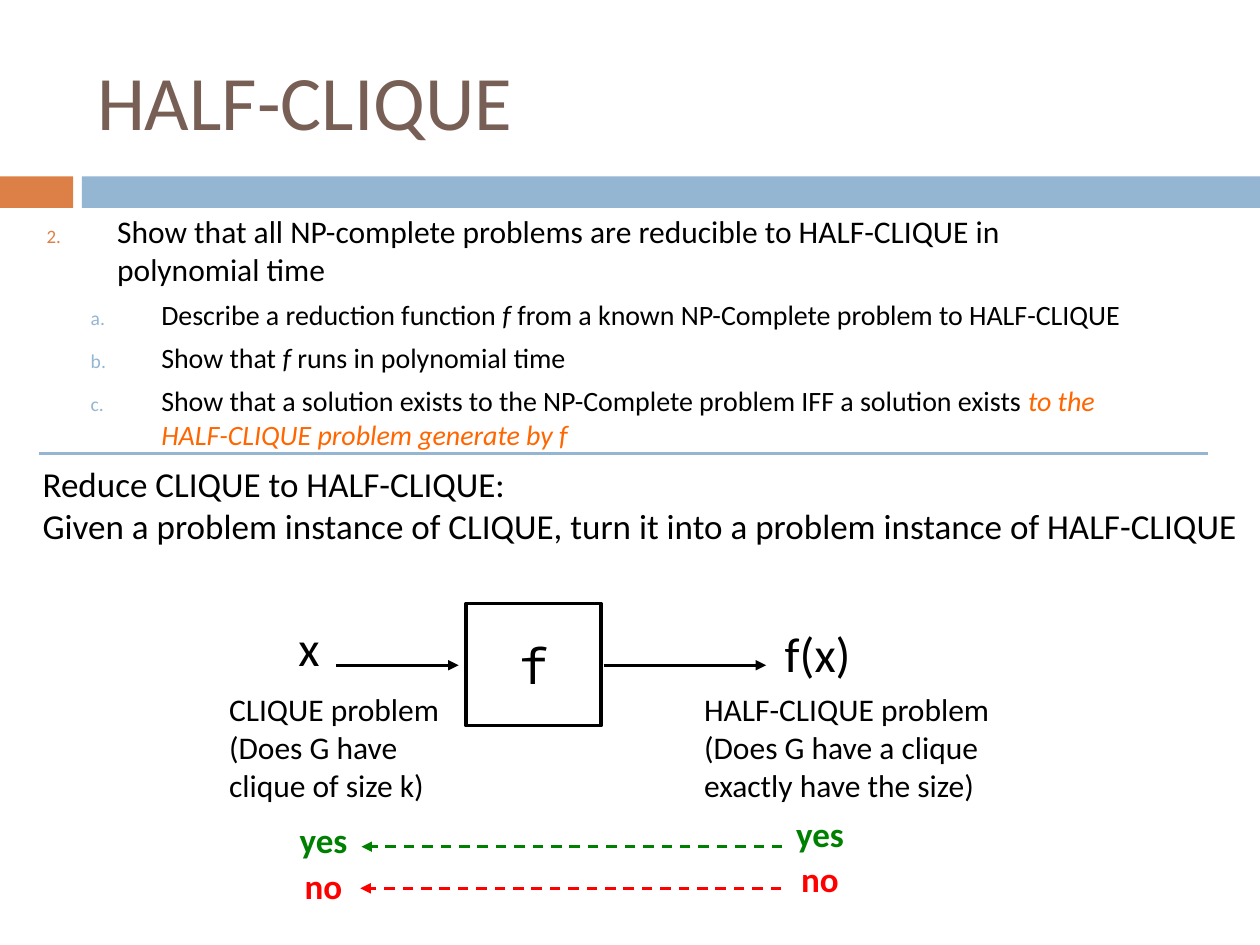
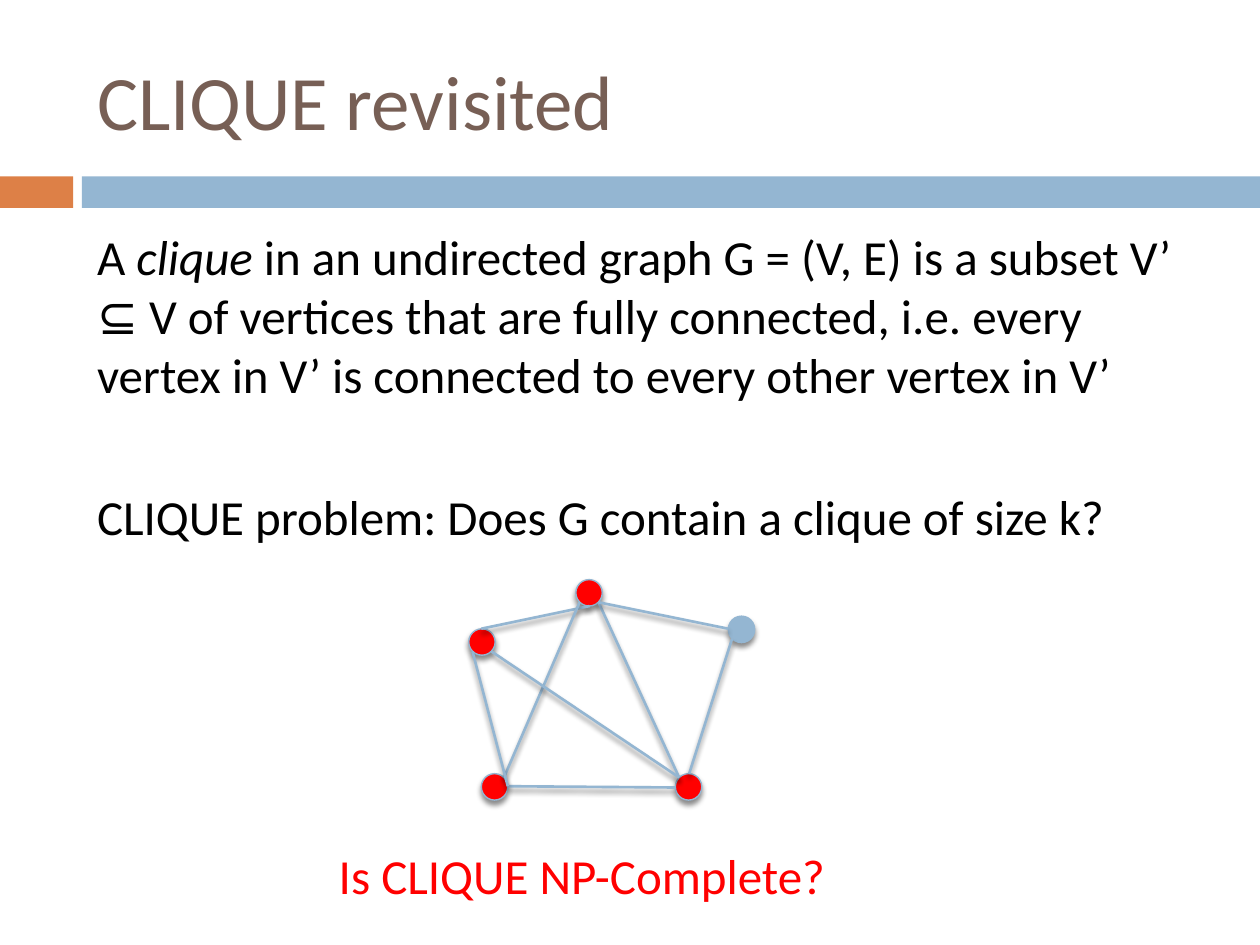
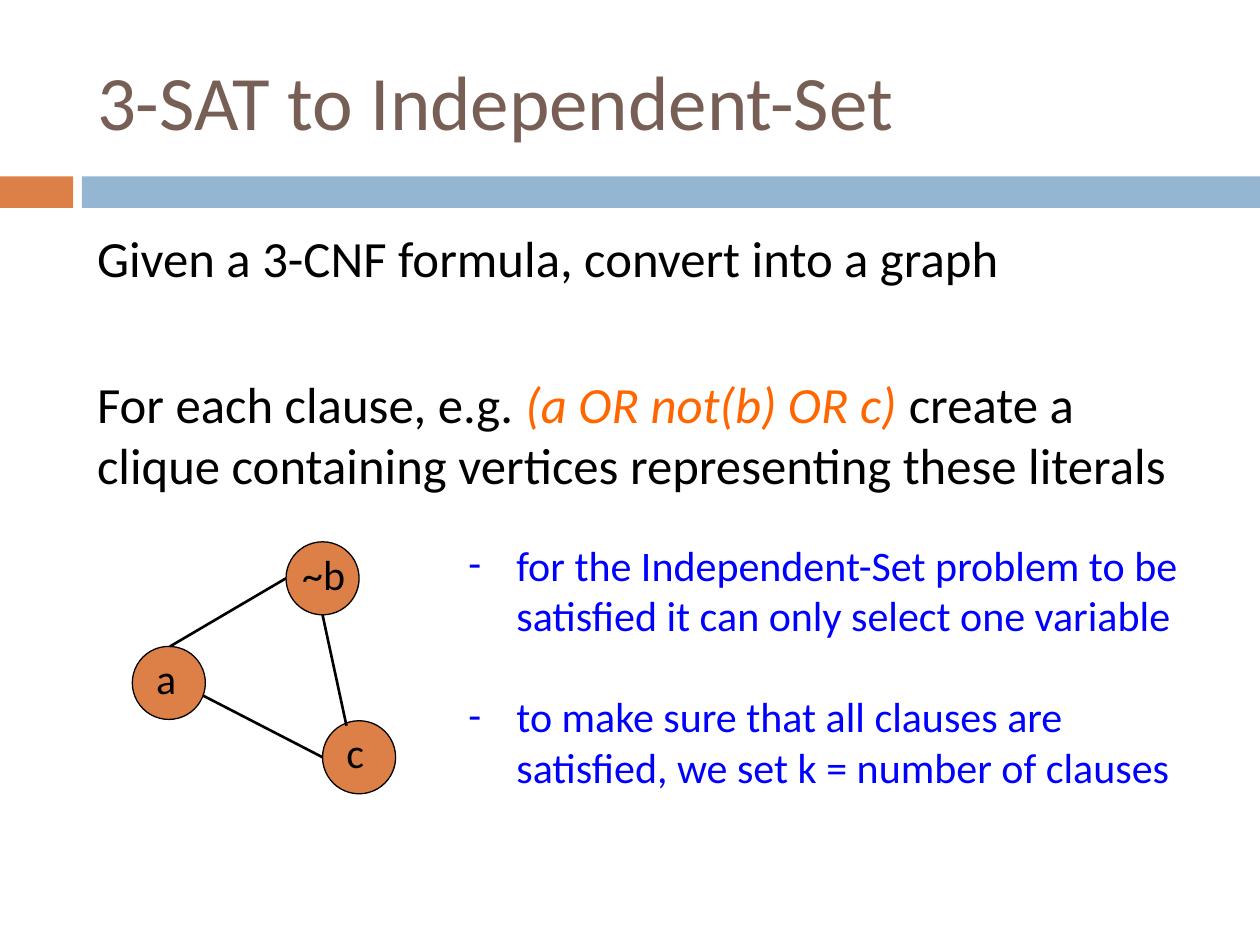
from dataclasses import dataclass
from lxml import etree
from pptx import Presentation
from pptx import util as u
from pptx.dml.color import RGBColor
from pptx.enum import dml, shapes, text
from pptx.oxml import ns, parse_xml


@dataclass(frozen=True)
class Theme:
    font: str = "Calibri"
    mono: str = "Noto Sans Mono"
    ink: str = "000000"
    paper: str = "FFFFFF"
    brown: str = "775F55"
    orange: str = "DD8047"
    blue: str = "94B6D2"
    accent: str = "FF6600"
    note: str = "0000FF"
    yes: str = "008000"
    no: str = "FF0000"
    title: float = 44
    large: float = 28
    medium: float = 24
    normal: float = 20
    small: float = 18
    detail: float = 16


T = Theme()
deck = Presentation()
deck.slide_width, deck.slide_height = u.Inches(10), u.Inches(7.5)
COL, ROW = deck.slide_width / 100, deck.slide_height / 75


def place(*cells):
    return [u.Emu(round(n * (ROW if i % 2 else COL))) for i, n in enumerate(cells)]


def write(frame, lines, size, color=T.ink, name=T.font, bold=False, before=0, level=0,
          align=text.PP_ALIGN.LEFT, **frame_format):
    for key, value in frame_format.items():
        setattr(frame, key, value)
    for line in lines:
        paragraph = frame.add_paragraph() if frame.text else frame.paragraphs[0]
        for key, value in {"alignment": align, "level": level,
                           "space_before": u.Pt(before)}.items():
            setattr(paragraph, key, value)
        for part in [line] if isinstance(line, str) else line:
            words, italic, tint = (part, False, color) if isinstance(part, str) else part
            run = paragraph.add_run()
            run.text = words
            font_format = {"name": name, "size": u.Pt(size), "bold": bold, "italic": italic}
            for key, value in font_format.items():
                setattr(run.font, key, value)
            run.font.color.rgb = RGBColor.from_string(tint)


BODY = {"auto_size": text.MSO_AUTO_SIZE.NONE, "word_wrap": True,
        "vertical_anchor": text.MSO_ANCHOR.TOP}
pages = []
for heading, body_area in [
    ("HALF-CLIQUE", (2.7, 16.35, 89.2, 23.1)),
    ("CLIQUE revisited", (6.7, 17.5, 89.2, 27.2)),
    ("3-SAT to Independent-Set", (6.7, 17.5, 89.2, 25)),
]:
    page = deck.slides.add_slide(deck.slide_layouts[1])
    pages.append(page)
    for part, area in [(page.shapes.title, (6.7, 2.5, 89.2, 10.8)),
                       (page.placeholders[1], body_area)]:
        part.left, part.top, part.width, part.height = place(*area)
    write(page.shapes.title.text_frame, [heading], T.title, T.brown,
          **{**BODY, "vertical_anchor": text.MSO_ANCHOR.MIDDLE})
half_clique, clique, independent_set = pages
steps, definition, conversion = [page.placeholders[1].text_frame for page in pages]

write(steps, ["Show that all NP-complete problems are reducible to HALF-CLIQUE in polynomial time"],
      T.small, before=7, **BODY)
write(steps, [
    ["Describe a reduction function ", ("f", True, T.ink),
     " from a known NP-Complete problem to HALF-CLIQUE"],
    ["Show that ", ("f", True, T.ink), " runs in polynomial time"],
    ["Show that a solution exists to the NP-Complete problem IFF a solution exists ",
     ("to the HALF-CLIQUE problem generate by f", True, T.accent)],
], T.detail, before=5.5, level=1)
write(definition, [
    ["A ", ("clique", True, T.ink),
     " in an undirected graph G = (V, E) is a subset V’ ⊆ V of vertices that are fully "
     "connected, i.e. every vertex in V’ is connected to every other vertex in V’"],
    "CLIQUE problem: Does G contain a clique of size k?",
], T.large, before=47.5, **BODY)
write(conversion, [
    "Given a 3-CNF formula, convert into a graph",
    ["For each clause, e.g. ", ("(a OR not(b) OR c)", True, T.accent),
     " create a clique containing vertices representing these literals"],
], T.large + 1, before=48.5, **BODY)
for frame in (definition, conversion):
    frame.paragraphs[0].space_before = u.Pt(7)

VERTEX, LITERAL = 2.1, 5.8
RECT, OVAL = shapes.MSO_SHAPE.RECTANGLE, shapes.MSO_SHAPE.OVAL
solids = [(page, RECT, area, fill, None, 0) for page in pages for area, fill in [
    ((0, 14, 5.8, 2.5), T.orange), ((6.5, 14, 93.5, 2.5), T.blue)]]
solids.append((half_clique, RECT, (37, 47.9, 10.7, 9.7), T.paper, T.ink, 2))
solids += [(clique, OVAL, (x, y, VERTEX, VERTEX), fill, T.blue, 0.79) for x, y, fill in [
    (45.7, 46, T.no), (37.2, 49.9, T.no), (38.2, 61.4, T.no),
    (53.6, 61.4, T.no), (57.8, 48.9, T.blue)]]
solids += [(independent_set, OVAL, (x, y, LITERAL, LITERAL), T.orange, T.ink, 0.75)
           for x, y in [(10.5, 51.3), (22.7, 43), (25.6, 57.2)]]
shadowed = []
for page, outline, area, fill, edge, weight in solids:
    solid = page.shapes.add_shape(outline, *place(*area))
    solid.shadow.inherit = False
    solid.fill.solid()
    solid.fill.fore_color.rgb = RGBColor.from_string(fill)
    if edge:
        solid.line.color.rgb = RGBColor.from_string(edge)
        solid.line.width = u.Pt(weight)
    else:
        solid.line.fill.background()
    if page is clique and outline == OVAL:
        shadowed.append(solid)
    if fill == T.paper:
        write(solid.text_frame, ["f"], T.large, name=T.mono, align=text.PP_ALIGN.CENTER,
              word_wrap=False, vertical_anchor=text.MSO_ANCHOR.MIDDLE)

links = [
    (half_clique, (3.1, 36, 95.9, 36), T.blue, False, False),
    (half_clique, (26.7, 52.8, 36.4, 52.8), T.ink, True, False),
    (half_clique, (47.9, 52.8, 60.8, 52.8), T.ink, True, False),
    (half_clique, (62.1, 67.2, 28.7, 67.2), T.yes, True, True),
    (half_clique, (62, 70.5, 28.6, 70.5), T.no, True, True),
]
links += [(clique, ends, T.blue, False, False) for ends in [
    (46.8, 48.1, 38.2, 49.9), (47.5, 47.8, 53.9, 61.7), (40.3, 62.4, 53.6, 62.5),
    (40, 61.7, 46, 47.8), (39, 51.7, 53.9, 61.7), (37.5, 51.7, 40.3, 62.4),
    (58.1, 50.7, 54.7, 61.4), (47.5, 47.8, 57.8, 49.9)]]
links += [(independent_set, ends, T.ink, False, False) for ends in [
    (13.5, 51.3, 22.7, 45.9), (16.1, 55.2, 25.6, 60.1), (25.6, 48.8, 27.5, 57.6)]]
for page, ends, color, arrow, dashed in links:
    link = page.shapes.add_connector(shapes.MSO_CONNECTOR.STRAIGHT, *place(*ends))
    link.line.color.rgb = RGBColor.from_string(color)
    link.line.width = u.Pt(1.5)
    if dashed:
        link.line.dash_style = dml.MSO_LINE.DASH
    if arrow:
        etree.SubElement(link.line._get_or_add_ln(), ns.qn("a:tailEnd"), type="triangle")
    etree.SubElement(link._element.spPr, ns.qn("a:effectLst"))
    if page is clique:
        shadowed.append(link)

for part in shadowed:
    part._element.spPr.find(ns.qn("a:effectLst")).append(parse_xml(
        f'<a:outerShdw {ns.nsdecls("a")} blurRad="{u.Pt(3)}" dist="{u.Pt(2.4)}" dir="5400000" '
        'rotWithShape="0"><a:srgbClr val="000000"><a:alpha val="45000"/></a:srgbClr>'
        '</a:outerShdw>'))

captions = [
    (half_clique, (2.4, 36.2, 97.6, 7.7), T.normal, T.ink, True, [
        "Reduce CLIQUE to HALF-CLIQUE:",
        "Given a problem instance of CLIQUE, turn it into a problem instance of HALF-CLIQUE"]),
    (half_clique, (22.7, 48.5, 4, 5.7), T.large, T.ink, False, ["x"]),
    (half_clique, (61.3, 49, 7.4, 5.7), T.large, T.ink, False, ["f(x)"]),
    (half_clique, (17.2, 54.3, 19, 10.1), T.small, T.ink, False,
     ["CLIQUE problem", "(Does G have", "clique of size k)"]),
    (half_clique, (54.9, 54.3, 26, 10.1), T.small, T.ink, False,
     ["HALF-CLIQUE problem", "(Does G have a clique", "exactly have the size)"]),
    (clique, (25.9, 66.6, 40.6, 5.7), T.large, T.no, False, ["Is CLIQUE NP-Complete?"]),
    (independent_set, (11.4, 51.3, 5, 5), T.medium, T.ink, True, ["a"]),
    (independent_set, (23, 43, 8.4, 5.1), T.medium, T.ink, True, ["~b"]),
    (independent_set, (26.5, 57.2, 5, 5), T.medium, T.ink, True, ["c"]),
    (independent_set, (36.2, 42.3, 59.6, 21.2), T.medium, T.note, True, [
        "for the Independent-Set problem to be satisfied it can only select one variable",
        "to make sure that all clauses are satisfied, we set k = number of clauses"]),
]
for x, y in [(22.8, 64.5), (62.2, 64)]:
    captions += [(half_clique, (x, y, 6, 4.4), T.normal, T.yes, False, ["yes"]),
                 (half_clique, (x + 0.4, y + 3.6, 5, 4.4), T.normal, T.no, False, ["no"])]
for page, area, size, color, wrap, lines in captions:
    caption = page.shapes.add_textbox(*place(*area)).text_frame
    write(caption, lines, size, color, bold=size == T.normal and not wrap,
          word_wrap=wrap, auto_size=text.MSO_AUTO_SIZE.SHAPE_TO_FIT_TEXT)
    if color == T.note:
        reasons = caption.paragraphs
reasons[1].space_before = u.Pt(29)

NUMBER = (T.orange, "60000", {"type": "arabicPeriod", "startAt": "2"})
LETTER = (T.blue, "70000", {"type": "alphaLcPeriod"})
markers = [(p, 9.1 if p.level else 5.6, 5.6, LETTER if p.level else NUMBER)
           for p in steps.paragraphs]
markers += [(p, 0, 0, None) for frame in (definition, conversion) for p in frame.paragraphs]
markers += [(p, 3.8, 3.8, "-") for p in reasons]
for paragraph, left, hang, marker in markers:
    props = paragraph._p.get_or_add_pPr()
    props.set("marL", str(round(left * COL)))
    props.set("indent", str(round(-hang * COL)))
    if marker is None:
        etree.SubElement(props, ns.qn("a:buNone"))
    elif marker == "-":
        etree.SubElement(props, ns.qn("a:buFont"), typeface=T.font)
        etree.SubElement(props, ns.qn("a:buChar"), char=marker)
    else:
        color, share, numbering = marker
        tint = etree.SubElement(props, ns.qn("a:buClr"))
        etree.SubElement(tint, ns.qn("a:srgbClr"), val=color)
        etree.SubElement(props, ns.qn("a:buSzPct"), val=share)
        etree.SubElement(props, ns.qn("a:buFont"), typeface=T.font)
        etree.SubElement(props, ns.qn("a:buAutoNum"), numbering)

deck.save("out.pptx")
